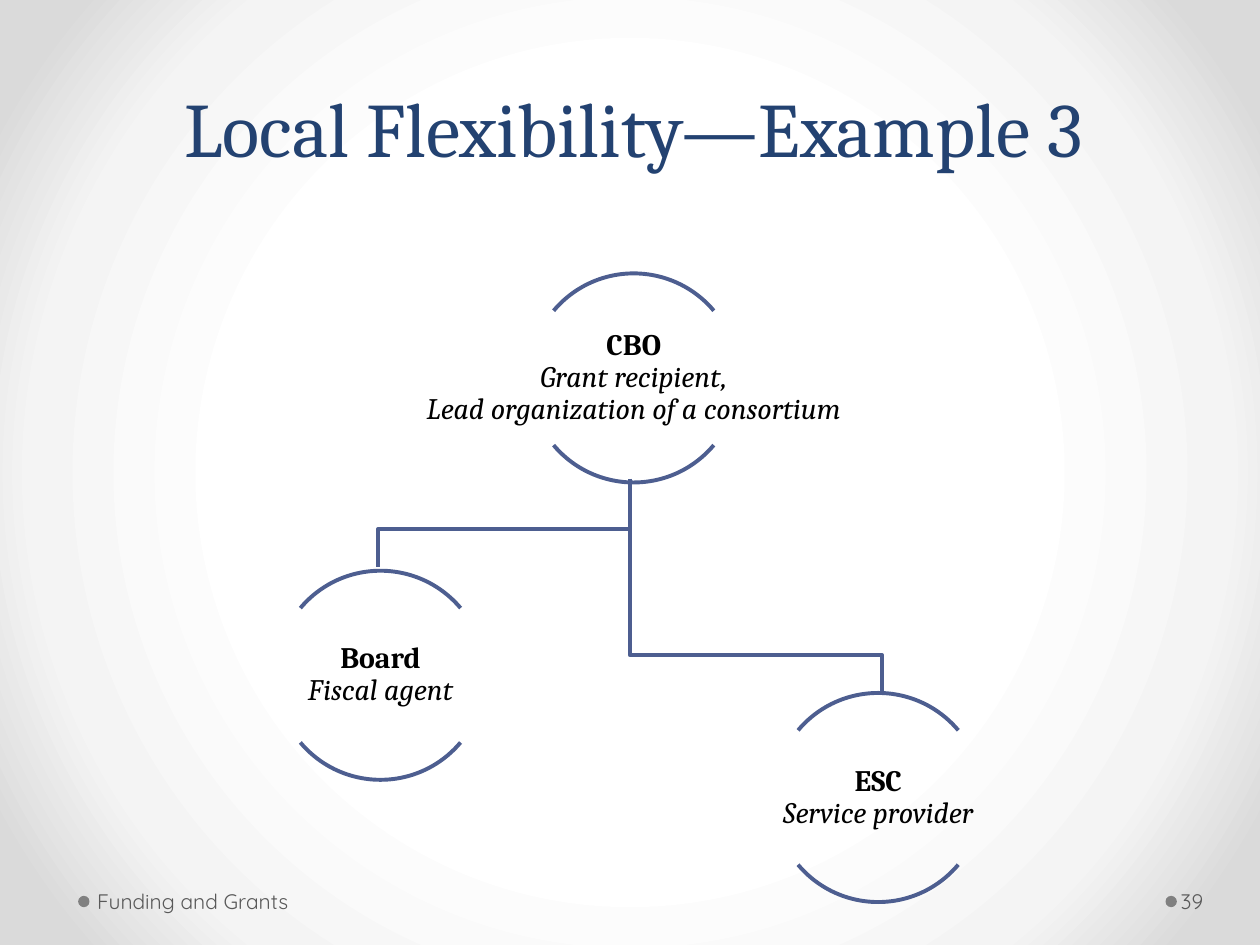
"""Build a slide showing a consortium, its fiscal agent and its service provider."""
import pptx
import pptx.dml.color
import pptx.enum.shapes
import pptx.enum.text
import pptx.oxml
import pptx.oxml.ns
import pptx.util

NAVY = pptx.dml.color.RGBColor(0x23, 0x42, 0x71)
BLUE = pptx.dml.color.RGBColor(0x4D, 0x5E, 0x90)
BLACK = pptx.dml.color.RGBColor(0x00, 0x00, 0x00)
GREY = pptx.dml.color.RGBColor(0x80, 0x80, 0x80)
DARK_GREY = pptx.dml.color.RGBColor(0x59, 0x59, 0x59)
BACKDROP = ((50, "FFFFFF"), (76, "F4F4F4"), (92, "DADADA"))

presentation = pptx.Presentation()
presentation.slide_width = pptx.util.Inches(10)
presentation.slide_height = pptx.util.Inches(7.5)
unit = presentation.slide_width // 100
slide = presentation.slides.add_slide(presentation.slide_layouts[5])


def box(*columns_and_rows):
    return [round(value * unit) for value in columns_and_rows]


def add_text(bounds, insets, size, font_name, color):
    text_box = slide.shapes.add_textbox(*box(*bounds))
    frame = text_box.text_frame
    frame.word_wrap = True
    frame.vertical_anchor = pptx.enum.text.MSO_ANCHOR.MIDDLE
    frame.margin_left, frame.margin_top, frame.margin_right, frame.margin_bottom = box(*insets)
    paragraph = frame.paragraphs[0]
    paragraph.font.size = pptx.util.Pt(size)
    paragraph.font.name = font_name
    paragraph.font.color.rgb = color
    return paragraph


slide.background.fill.gradient()
gradient = slide.background._cSld.find(".//" + pptx.oxml.ns.qn("a:gradFill"))
stops = "".join(
    f'<a:gs pos="{position * 1000}"><a:srgbClr val="{color}"/></a:gs>'
    for position, color in BACKDROP
)
gradient.getparent().replace(gradient, pptx.oxml.parse_xml(
    f'<a:gradFill {pptx.oxml.ns.nsdecls("a")} rotWithShape="1"><a:gsLst>{stops}</a:gsLst>'
    '<a:path path="circle"><a:fillToRect l="50000" t="50000" r="50000" b="50000"/></a:path>'
    '</a:gradFill>'
))

title = slide.shapes.title
title.left, title.top, title.width, title.height = box(5.3, 3.6, 90, 10.6)
title.text_frame.text = "Local Flexibility—Example 3"
title.text_frame.vertical_anchor = pptx.enum.text.MSO_ANCHOR.BOTTOM
paragraph = title.text_frame.paragraphs[0]
paragraph.alignment = pptx.enum.text.PP_ALIGN.CENTER
paragraph.line_spacing = pptx.util.Pt(58)
paragraph.font.size = pptx.util.Pt(44)
paragraph.font.name = "Cambria"
paragraph.font.color.rgb = NAVY

for dot_left, text_left, text_width, left_inset, text in (
    (6.2, 7.2, 31.1, 0.5, "Funding and Grants"),
    (92.5, 93.4, 6.1, 0.3, "39"),
):
    dot = slide.shapes.add_shape(
        pptx.enum.shapes.MSO_SHAPE.OVAL, *box(dot_left, 71.1, 0.9, 0.9))
    dot.shadow.inherit = False
    dot.fill.solid()
    dot.fill.fore_color.rgb = GREY
    dot.line.fill.background()
    paragraph = add_text((text_left, 69.5, text_width, 4), (left_inset, 0.5, 0.5, 0.5),
                         12, "Quicksand", DARK_GREY)
    paragraph.add_run().text = text

diameter = 16.6
drop = 3.5
nodes = (
    (50.3, 21.7, "CBO", "Grant recipient,\vLead organization of a consortium"),
    (30.2, 45.3, "Board", "Fiscal agent"),
    (69.7, 55, "ESC", "Service provider"),
)
parent_center, parent_top = nodes[0][:2]
parent_bottom = parent_top + diameter

for center, top, name, role in nodes:
    outlines = []
    if top > parent_bottom:
        builder = slide.shapes.build_freeform(parent_center, parent_bottom, scale=unit)
        builder.add_line_segments(
            [(parent_center, top - drop), (center, top - drop), (center, top)], close=False)
        outlines.append(builder.convert_to_shape())
    for start, end in ((132, 192), (24, 84)):
        arc = slide.shapes.add_shape(
            pptx.enum.shapes.MSO_SHAPE.ARC, *box(center - diameter / 2, top, diameter, diameter))
        arc.adjustments[0] = start
        arc.adjustments[1] = end
        outlines.append(arc)
    for outline in outlines:
        outline.shadow.inherit = False
        outline.fill.background()
        outline.line.color.rgb = BLUE
        outline.line.width = pptx.util.Pt(2.25)

    paragraph = add_text((center - diameter, top + 3, 2 * diameter, 10.6), [0.1] * 4,
                         17, "Cambria", BLACK)
    paragraph.alignment = pptx.enum.text.PP_ALIGN.CENTER
    paragraph.line_spacing = 0.9
    heading = paragraph.add_run()
    heading.text = name
    heading.font.bold = True
    for line in role.split("\v"):
        paragraph.add_line_break()
        run = paragraph.add_run()
        run.text = line
        run.font.italic = True

presentation.save("out.pptx")
